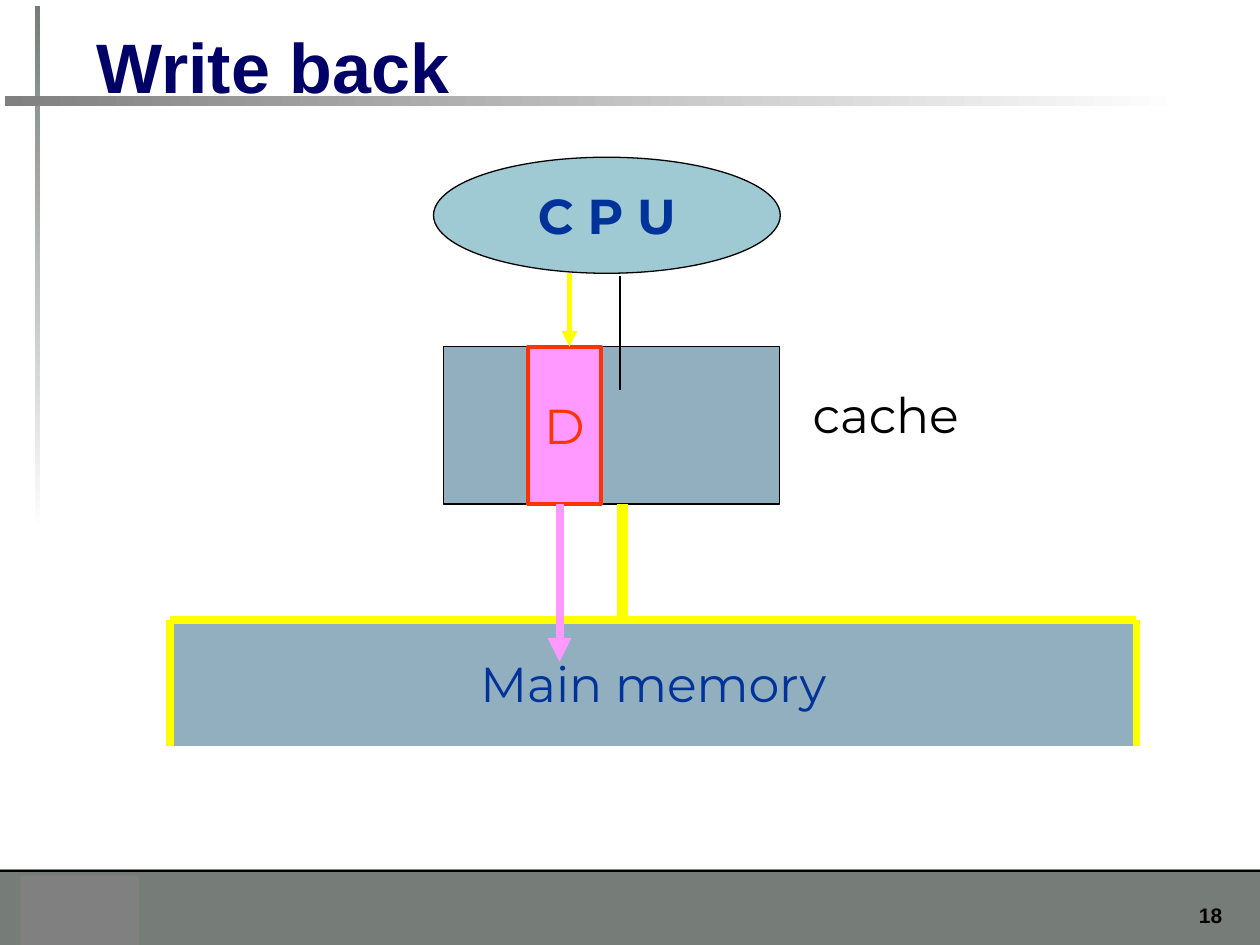
import dataclasses
import typing

import pptx
import pptx.dml.color
import pptx.enum.dml
import pptx.enum.shapes
import pptx.enum.text
import pptx.oxml
import pptx.oxml.ns
import pptx.util

Cm = pptx.util.Cm
Pt = pptx.util.Pt
KIND = pptx.enum.shapes.MSO_SHAPE
ALIGN = pptx.enum.text.PP_ALIGN
ANCHOR = pptx.enum.text.MSO_ANCHOR


@dataclasses.dataclass(frozen=True)
class Theme:
    white: str = "FFFFFF"
    black: str = "000000"
    grey: str = "808080"
    slate: str = "767D79"
    navy: str = "000066"
    blue: str = "003399"
    teal: str = "9FCAD3"
    steel: str = "91AFBF"
    yellow: str = "FFFF00"
    pink: str = "FF99FF"
    red: str = "FF3300"
    head: str = "Arial"
    body: str = "Montserrat"
    title: int = 40
    label: int = 28
    number: int = 12


THEME = Theme()


@dataclasses.dataclass(frozen=True)
class Text:
    words: str
    color: str
    size: int = THEME.label
    font: str = THEME.body
    bold: bool = False
    align: typing.Any = ALIGN.CENTER
    anchor: typing.Any = ANCHOR.MIDDLE
    wrap: bool = False


@dataclasses.dataclass(frozen=True)
class Box:
    """A filled shape, measured in centimetres."""
    left: float
    top: float
    width: float
    height: float
    fill: str
    line: str = ""
    weight: float = 0.75
    text: typing.Optional[Text] = None
    kind: typing.Any = KIND.RECTANGLE
    fade: typing.Optional[int] = None  # angle of a fade to white

    @property
    def right(self) -> float:
        return self.left + self.width

    @property
    def base(self) -> float:
        return self.top + self.height


@dataclasses.dataclass(frozen=True)
class Label:
    left: float
    top: float
    width: float
    height: float
    text: Text


@dataclasses.dataclass(frozen=True)
class Line:
    x1: float
    y1: float
    x2: float
    y2: float
    color: str
    weight: float
    arrow: bool = False


def rgb(code: str) -> pptx.dml.color.RGBColor:
    return pptx.dml.color.RGBColor.from_string(code)


def write(shape: typing.Any, text: Text) -> None:
    frame = shape.text_frame
    frame.text = text.words
    frame.word_wrap = text.wrap
    frame.vertical_anchor = text.anchor
    para = frame.paragraphs[0]
    para.alignment = text.align
    font = para.runs[0].font
    font.name, font.size, font.bold = text.font, Pt(text.size), text.bold
    font.color.rgb = rgb(text.color)


def draw_box(slide: typing.Any, box: Box) -> None:
    shape = slide.shapes.add_shape(
        box.kind, Cm(box.left), Cm(box.top), Cm(box.width), Cm(box.height))
    shape.shadow.inherit = False
    if box.fade is None:
        shape.fill.solid()
        shape.fill.fore_color.rgb = rgb(box.fill)
    else:
        shape.fill.gradient()
        shape.fill.gradient_angle = box.fade
        for stop, code in zip(shape.fill.gradient_stops, (box.fill, THEME.white)):
            stop.color.rgb = rgb(code)
    if box.line:
        shape.line.color.rgb = rgb(box.line)
        shape.line.width = Pt(box.weight)
    else:
        shape.line.fill.background()
    if box.text:
        write(shape, box.text)


def draw_label(slide: typing.Any, label: Label) -> None:
    shape = slide.shapes.add_textbox(
        Cm(label.left), Cm(label.top), Cm(label.width), Cm(label.height))
    write(shape, label.text)


def draw_line(slide: typing.Any, line: Line) -> None:
    wire = slide.shapes.add_connector(
        pptx.enum.shapes.MSO_CONNECTOR.STRAIGHT,
        Cm(line.x1), Cm(line.y1), Cm(line.x2), Cm(line.y2))
    wire.line.color.rgb = rgb(line.color)
    wire.line.width = Pt(line.weight)
    if line.arrow:
        tail = pptx.oxml.parse_xml(
            f'<a:tailEnd {pptx.oxml.ns.nsdecls("a")} type="triangle"/>')
        wire.line.fill  # the line element exists from here on
        wire.element.spPr.find(pptx.oxml.ns.qn("a:ln")).append(tail)
    wire.element.spPr.append(
        pptx.oxml.parse_xml(f'<a:effectLst {pptx.oxml.ns.nsdecls("a")}/>'))


def frame_parts() -> list:
    """The title, rules and footer around the diagram."""
    t = THEME
    page = Text("18", t.black, t.number, t.head, True, ALIGN.RIGHT, ANCHOR.TOP, True)
    title = Text("Write back", t.navy, t.title, t.head, True, ALIGN.LEFT,
                 ANCHOR.BOTTOM, True)
    return [
        Box(0, 17.53, 25.4, 1.52, t.slate),
        Box(0, 17.53, 25.4, 0.05, t.black),
        Label(23.29, 18.06, 1.6, 0.76, page),
        Box(0.71, 0.13, 0.1, 10.59, t.slate, fade=270),
        Box(0.1, 1.93, 23.8, 0.2, t.grey, fade=0),
        Label(1.7, 0.33, 23.01, 1.96, title),
    ]


def diagram() -> list:
    t = THEME
    cpu = Box(8.74, 3.17, 6.99, 2.34, t.teal, t.black,
              text=Text("C P U", t.blue, bold=True), kind=KIND.OVAL)
    cache = Box(8.94, 6.99, 6.78, 3.17, t.steel, t.black)
    memory = Box(3.43, 12.5, 19.48, 2.54, t.steel, text=Text("Main memory", t.blue))
    dirty = Box(10.64, cache.top, 1.47, cache.height, t.pink, t.red, 2.25,
                Text("D", t.red))
    name = Text("cache", t.black, align=ALIGN.LEFT, anchor=ANCHOR.TOP, wrap=True)
    sides = [Line(x, memory.top, x, memory.base, t.yellow, 4.5)
             for x in (memory.left, memory.right)]
    return [
        cpu,
        cache,
        Line(12.5, 5.56, 12.5, 7.87, t.black, 0.75),
        memory,
        Label(16.13, 7.62, 4.01, 1.45, name),
        Line(memory.left, memory.top, memory.right, memory.top, t.yellow, 4.5),
        *sides,
        Line(12.55, cache.base, 12.55, memory.top, t.yellow, 6),
        dirty,
        Line(11.48, cpu.base, 11.48, dirty.top, t.yellow, 3, True),
        Line(11.28, dirty.base, 11.28, 13.34, t.pink, 4.5, True),
    ]


def main() -> None:
    deck = pptx.Presentation()
    deck.slide_width, deck.slide_height = Cm(25.4), Cm(19.05)
    slide = deck.slides.add_slide(deck.slide_layouts[6])
    draw = {Box: draw_box, Label: draw_label, Line: draw_line}
    corner = Box(0.41, 17.65, 2.39, 1.4, THEME.grey)
    for part in [*frame_parts(), *diagram(), corner]:
        draw[type(part)](slide, part)
    deck.save("out.pptx")


if __name__ == "__main__":
    main()
